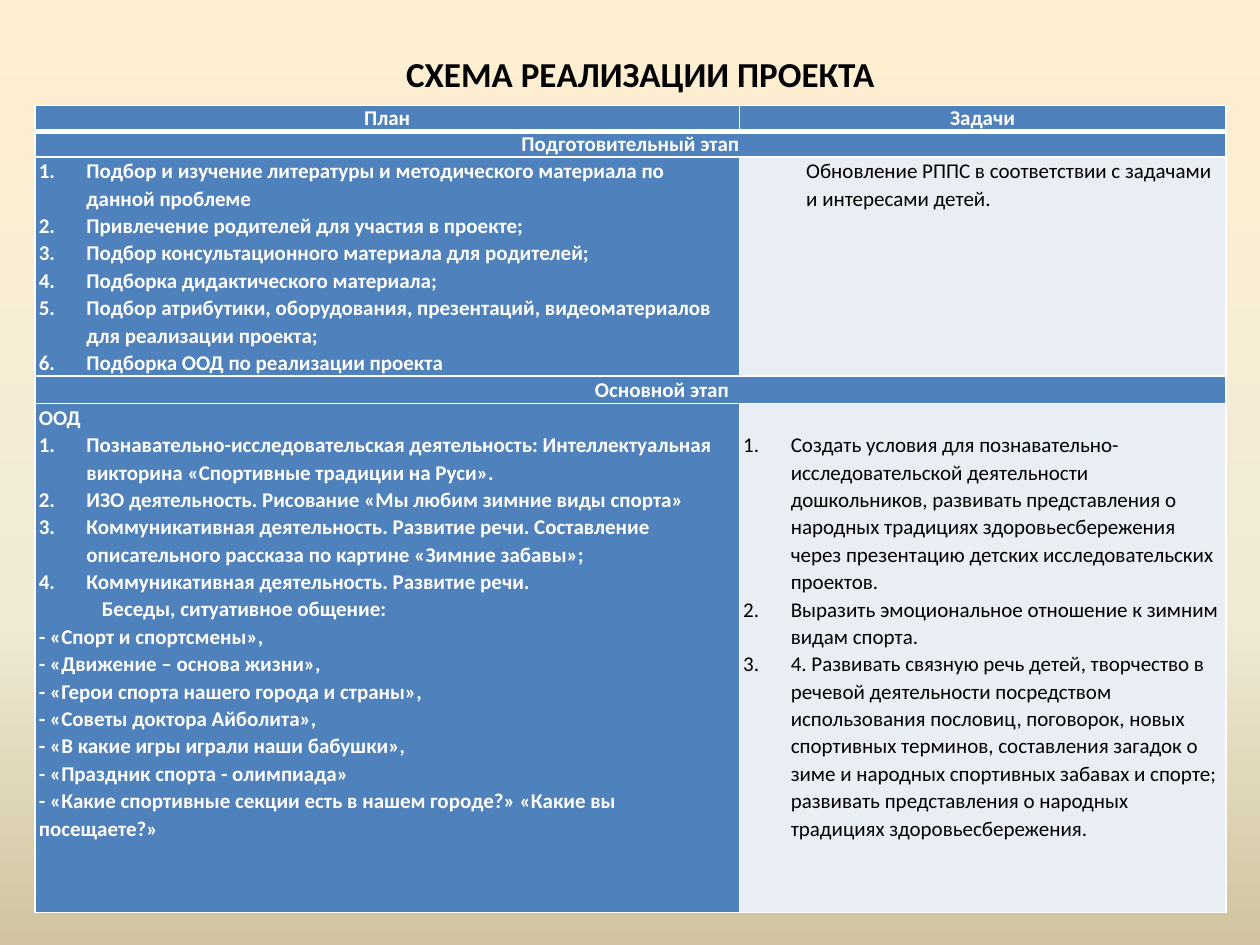
from copy import deepcopy
from pptx import Presentation
from pptx.dml.color import RGBColor
from pptx.enum.text import MSO_ANCHOR, PP_ALIGN
from pptx.oxml.ns import qn
from pptx.util import Pt
from lxml.etree import SubElement

HUES = {"top": "FFEFD1", "mid": "F0EBD5", "low": "D1C39F", "blue": "4F81BD",
        "pale": "E9EDF4", "white": "FFFFFF", "black": "000000"}
COLS = [402.5, 278]
ROWS = [14.4, 14.4, 120.2, 14.4, 290.9]
STEP = 27.2   # hanging indent of numbered items
LINE = 15.7   # one line of table text

PREP = [
    "Подбор и изучение литературы и методического материала по данной проблеме",
    "Привлечение родителей для участия в проекте;",
    "Подбор консультационного материала для родителей;",
    "Подборка дидактического материала;",
    "Подбор атрибутики, оборудования, презентаций, видеоматериалов для реализации проекта;",
    "Подборка ООД по реализации проекта",
]
WORK = [
    "Познавательно-исследовательская деятельность: Интеллектуальная викторина «Спортивные традиции на Руси».",
    "ИЗО деятельность. Рисование «Мы любим зимние виды спорта»",
    "Коммуникативная деятельность. Развитие речи. Составление описательного рассказа по картине «Зимние забавы»;",
    "Коммуникативная деятельность. Развитие речи.",
]
TALKS = [
    "- «Спорт и спортсмены»,",
    "- «Движение – основа жизни»,",
    "- «Герои спорта нашего города и страны»,",
    "- «Советы доктора Айболита»,",
    "- «В какие игры играли наши бабушки»,",
    "- «Праздник спорта - олимпиада»",
    "- «Какие спортивные секции есть в нашем городе?» «Какие вы посещаете?»",
]
GOALS = [
    "Создать условия для познавательно-исследовательской деятельности дошкольников, развивать представления "
    "о народных традициях здоровьесбережения через презентацию детских исследовательских проектов.",
    "Выразить эмоциональное отношение к зимним видам спорта.",
    "4. Развивать связную речь детей, творчество в речевой деятельности посредством использования пословиц, "
    "поговорок, новых спортивных терминов, составления загадок о зиме и народных спортивных забавах и спорте; "
    "развивать представления о народных традициях здоровьесбережения.",
]


def rgb(hue):
    return RGBColor.from_string(HUES[hue])


def set_font(para, size, hue, bold):
    font = para.font
    font.name, font.size, font.bold = "Calibri", Pt(size), bold
    font.color.rgb = rgb(hue)


def paint_back(slide):
    fill = slide.background.fill
    fill.gradient()
    fill.gradient_angle = 270
    stops = slide.element.find(".//" + qn("a:gsLst"))
    stops.append(deepcopy(stops[0]))
    for stop, hue, place in zip(fill.gradient_stops, ("top", "mid", "low"), (0, 0.65, 1)):
        stop.color.rgb = rgb(hue)
        stop.position = place


def add_title(slide, text):
    title = slide.shapes.title
    title.left, title.top, title.width, title.height = Pt(60), Pt(26), Pt(612), Pt(32)
    frame = title.text_frame
    frame.text = text
    frame.vertical_anchor = MSO_ANCHOR.MIDDLE
    frame.paragraphs[0].alignment = PP_ALIGN.CENTER
    set_font(frame.paragraphs[0], 20, "black", True)


def add_edges(cell, row):
    props = cell._tc.get_or_add_tcPr()
    thick = {"T": row == 1, "B": row == 0}  # heavy rule under the header
    for side in "LRTB":
        width = 3 if thick.get(side) else 1
        line = SubElement(props, qn("a:ln" + side), w=str(Pt(width)))
        fill = SubElement(line, qn("a:solidFill"))
        SubElement(fill, qn("a:srgbClr"), val=HUES["white"])


def style_cell(cell, row, hue):
    add_edges(cell, row)
    cell.fill.solid()
    cell.fill.fore_color.rgb = rgb(hue)
    cell.margin_left = cell.margin_right = Pt(2.2)
    cell.margin_top = cell.margin_bottom = 0


def set_indent(para, left, first=0, number=False):
    props = para._p.get_or_add_pPr()
    props.set("marL", str(Pt(left)))
    props.set("indent", str(Pt(first)))
    if number:
        SubElement(props, qn("a:buFont"), typeface="+mj-lt")
        SubElement(props, qn("a:buAutoNum"), type="arabicPeriod")


def fill_head(cell, text, left=0, space=1):
    cell.text = text
    para = cell.text_frame.paragraphs[0]
    set_indent(para, left)
    para.alignment = PP_ALIGN.CENTER
    para.line_spacing = space
    set_font(para, 12, "white", True)


def fill_body(cell, items, hue, bold):
    """Each item is a pair of text and kind: plain, inset or number."""
    frame = cell.text_frame
    for i, (text, kind) in enumerate(items):
        para = frame.paragraphs[0] if i == 0 else frame.add_paragraph()
        para.text = text
        if kind == "number":
            set_indent(para, STEP, -STEP, True)
        else:
            set_indent(para, 36 if kind == "inset" else 0)
        para.line_spacing = 1.07
        set_font(para, 12, hue, bold)


def tag(texts, kind):
    return [(text, kind) for text in texts]


def add_grid(slide):
    frame = slide.shapes.add_table(len(ROWS), len(COLS), Pt(20), Pt(60.4),
                                   Pt(sum(COLS)), Pt(sum(ROWS)))
    table = frame.table
    table.first_row = table.horz_banding = False
    for col, width in zip(table.columns, COLS):
        col.width = Pt(width)
    for i, (row, height) in enumerate(zip(table.rows, ROWS)):
        row.height = Pt(height)
        for j, cell in enumerate(row.cells):
            style_cell(cell, i, "pale" if j == 1 and i in (2, 4) else "blue")
    for i in (1, 3):
        table.cell(i, 0).merge(table.cell(i, 1))
    return table


def main():
    deck = Presentation()
    deck.slide_width, deck.slide_height = Pt(720), Pt(540)
    slide = deck.slides.add_slide(deck.slide_layouts[0])
    sub = slide.placeholders[1].element
    sub.getparent().remove(sub)
    paint_back(slide)
    add_title(slide, "СХЕМА РЕАЛИЗАЦИИ ПРОЕКТА")

    # Header and stage rows
    table = add_grid(slide)
    fill_head(table.cell(0, 0), "План")
    fill_head(table.cell(0, 1), "Задачи")
    fill_head(table.cell(1, 0), "Подготовительный этап")
    fill_head(table.cell(3, 0), "Основной этап", 36, 1.07)

    # Plan column
    fill_body(table.cell(2, 0), tag(PREP, "number"), "white", True)
    plan = [("ООД", "plain"), *tag(WORK, "number"),
            ("Беседы, ситуативное общение:", "inset"), *tag(TALKS, "plain")]
    fill_body(table.cell(4, 0), plan, "white", True)

    # Goals column, its list starting one line lower
    note = "Обновление РППС в соответствии с задачами и интересами детей."
    fill_body(table.cell(2, 1), [(note, "inset")], "black", False)
    fill_body(table.cell(4, 1), tag(GOALS, "number"), "black", False)
    table.cell(4, 1).margin_top = Pt(LINE)

    deck.save("out.pptx")


if __name__ == "__main__":
    main()
